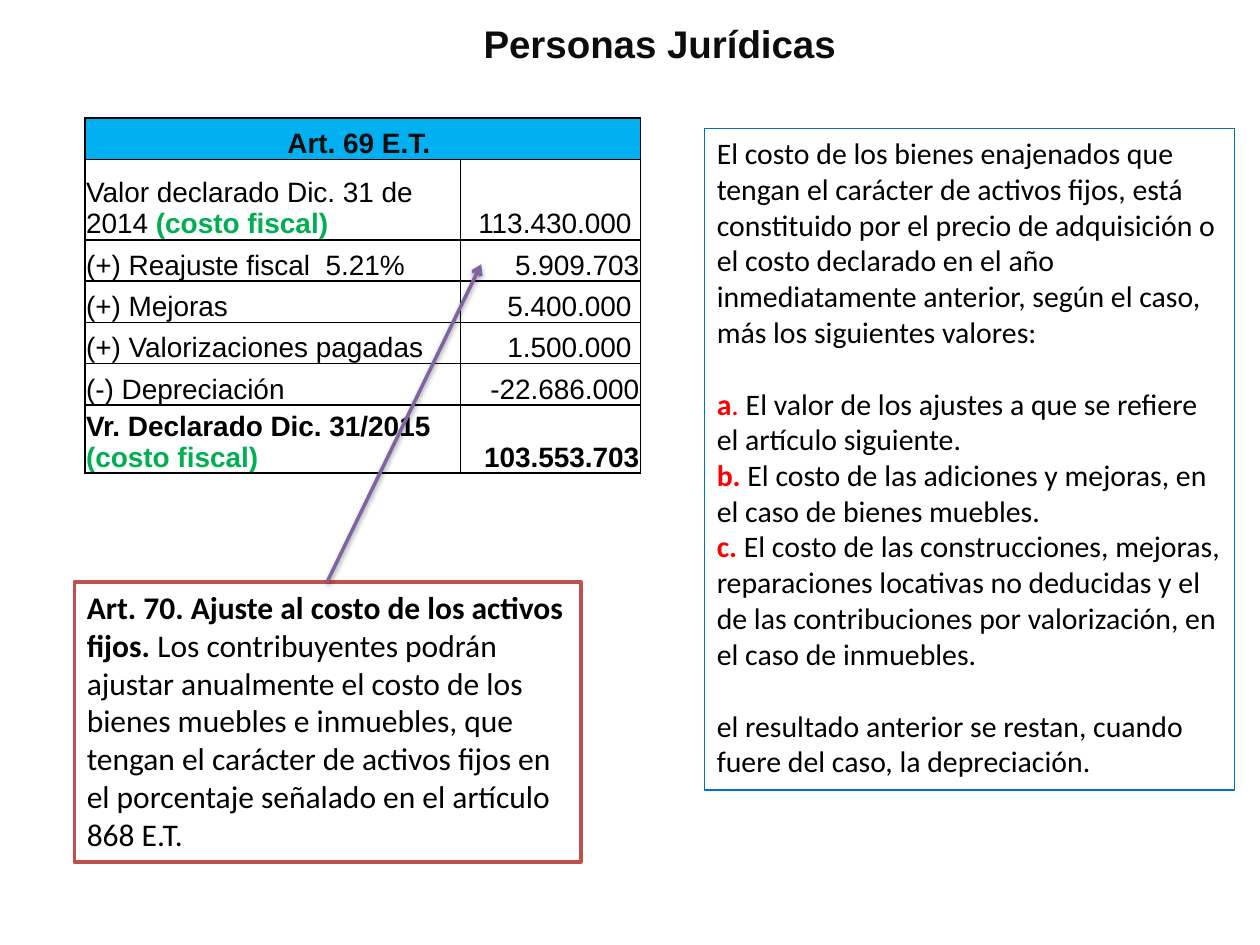
from dataclasses import dataclass

from lxml import etree
from pptx import Presentation
from pptx.dml.color import RGBColor
from pptx.enum.shapes import MSO_CONNECTOR as Conn, MSO_SHAPE as Shape
from pptx.enum.text import MSO_ANCHOR as Anchor, PP_ALIGN as Align
from pptx.oxml import parse_xml
from pptx.oxml.ns import nsdecls, qn
from pptx.util import Pt


@dataclass(frozen=True)
class Theme:
    head: str = "Arial"
    body: str = "Calibri"
    title: int = 22
    law: int = 17
    note: int = 18
    cell: int = 16
    ink: str = "000000"
    dark: str = "0D0D0D"
    white: str = "FFFFFF"
    red: str = "FF0000"
    green: str = "00B050"
    sky: str = "00B0F0"
    blue: str = "0070C0"
    brick: str = "C0504D"
    violet: str = "8064A2"


T = Theme()

# A run is (text, colour, bold); a paragraph is a list of runs.
TITLE = [[("Personas Jurídicas", T.dark, True)]]
LAW = [
    [("El costo de los bienes enajenados que tengan el carácter de activos "
      "fijos, está constituido por el precio de adquisición o el costo "
      "declarado en el año inmediatamente anterior, según el caso, más los "
      "siguientes valores:", T.ink, False)],
    [("a", T.red, True), (".", T.red, False),
     (" El valor de los ajustes a que se refiere el artículo siguiente.",
      T.ink, False)],
    [("b.", T.red, True),
     (" El costo de las adiciones y mejoras, en el caso de bienes muebles.",
      T.ink, False)],
    [("c.", T.red, True),
     (" El costo de las construcciones, mejoras, reparaciones locativas no "
      "deducidas y el de las contribuciones por valorización, en el caso de "
      "inmuebles.", T.ink, False)],
    [("el resultado anterior se restan, cuando fuere del caso, la "
      "depreciación.", T.ink, False)],
]
LAW_GAPS = {1: 20.7, 4: 20.7}
NOTE = [[
    ("Art. 70. Ajuste al costo de los activos fijos. ", T.ink, True),
    ("Los contribuyentes podrán ajustar anualmente el costo de los bienes "
     "muebles e inmuebles, que tengan el carácter de activos fijos en el "
     "porcentaje señalado en el artículo 868 E.T.", T.ink, False),
]]

HEAD = "Art. 69 E.T. "
FISCAL = "(costo fiscal)"
# Label, green tag, value, bold, row height
ROWS = [
    ("Valor declarado Dic. 31 de 2014 ", FISCAL, "113.430.000 ", False, 46),
    ("(+) Reajuste fiscal  5.21%", "", "5.909.703", False, 23.6),
    ("(+) Mejoras", "", "5.400.000 ", False, 23.6),
    ("(+) Valorizaciones pagadas", "", "1.500.000 ", False, 23.6),
    ("(-) Depreciación", "", "-22.686.000", False, 23.6),
    ("Vr. Declarado Dic. 31/2015 ", FISCAL, "103.553.703", True, 39),
]
HEAD_H = 23.6
COLS = (214.5, 103)


def rgb(code):
    return RGBColor.from_string(code)


def write(frame, paras, size, face, align=Align.LEFT, gaps={}):
    frame.word_wrap = True
    for i, runs in enumerate(paras):
        para = frame.paragraphs[0] if i == 0 else frame.add_paragraph()
        para.alignment = align
        if i in gaps:
            para.space_before = Pt(gaps[i])
        for text, color, bold in runs:
            run = para.add_run()
            run.text = text
            font = run.font
            font.name, font.size, font.bold = face, Pt(size), bold
            font.color.rgb = rgb(color)


def add_box(shapes, place, line, width, fill=None, anchor=Anchor.TOP):
    box = shapes.add_shape(Shape.RECTANGLE, *map(Pt, place))
    box.shadow.inherit = False
    if fill:
        box.fill.solid()
        box.fill.fore_color.rgb = rgb(fill)
    else:
        box.fill.background()
    box.line.color.rgb = rgb(line)
    box.line.width = Pt(width)
    box.text_frame.vertical_anchor = anchor
    return box.text_frame


def fill_cell(cell, runs, align, fill=T.white):
    cell.margin_left = cell.margin_right = cell.margin_top = Pt(0.7)
    cell.margin_bottom = Pt(0)
    cell.vertical_anchor = Anchor.BOTTOM
    write(cell.text_frame, [runs], T.cell, T.head, align)
    props = cell._tc.get_or_add_tcPr()
    for side in ("lnL", "lnR", "lnT", "lnB"):
        edge = etree.SubElement(props, qn("a:" + side), w=str(Pt(1)))
        paint = etree.SubElement(edge, qn("a:solidFill"))
        etree.SubElement(paint, qn("a:srgbClr"), val=T.ink)
    cell.fill.solid()
    cell.fill.fore_color.rgb = rgb(fill)


def add_costs(shapes):
    heights = [HEAD_H] + [row[-1] for row in ROWS]
    place = (48.5, 67.5, sum(COLS), sum(heights))
    table = shapes.add_table(len(heights), 2, *map(Pt, place)).table
    for col, width in zip(table.columns, COLS):
        col.width = Pt(width)
    for row, height in zip(table.rows, heights):
        row.height = Pt(height)
    table.cell(0, 0).merge(table.cell(0, 1))
    fill_cell(table.cell(0, 0), [(HEAD, T.dark, True)], Align.CENTER, T.sky)
    for i, (label, tag, value, bold, _) in enumerate(ROWS, 1):
        runs = [(label, T.ink, bold)]
        if tag:
            runs.append((tag, T.green, True))
        fill_cell(table.cell(i, 0), runs, Align.LEFT)
        fill_cell(table.cell(i, 1), [(value, T.ink, bold)], Align.RIGHT)


def add_arrow(shapes, start, end):
    """Draw an arrow with a soft shadow just below it."""
    arrow = shapes.add_connector(Conn.STRAIGHT, *map(Pt, start + end))
    arrow.line.color.rgb = rgb(T.violet)
    arrow.line.width = Pt(2)
    props = arrow._element.spPr
    etree.SubElement(props.find(qn("a:ln")), qn("a:tailEnd"), type="arrow")
    props.append(parse_xml(
        f'<a:effectLst {nsdecls("a")}><a:outerShdw blurRad="{Pt(3.1)}" '
        f'dist="{Pt(1.6)}" dir="5400000" rotWithShape="0">'
        f'<a:srgbClr val="{T.ink}"><a:alpha val="38000"/></a:srgbClr>'
        '</a:outerShdw></a:effectLst>'))


def main():
    deck = Presentation()
    deck.slide_width, deck.slide_height = Pt(720), Pt(540)
    shapes = deck.slides.add_slide(deck.slide_layouts[6]).shapes

    title = add_box(shapes, (178.5, 6, 397, 37.5), T.white, 2, T.white,
                    Anchor.MIDDLE)
    write(title, TITLE, T.title, T.head, Align.CENTER)
    law = add_box(shapes, (402.5, 73.5, 303, 378), T.blue, 0.75)
    write(law, LAW, T.law, T.body, gaps=LAW_GAPS)
    note = add_box(shapes, (42.5, 332.5, 289.5, 160), T.brick, 2, T.white)
    write(note, NOTE, T.note, T.body)
    add_costs(shapes)
    add_arrow(shapes, (187, 332.5), (275, 151))
    deck.save("out.pptx")


if __name__ == "__main__":
    main()
